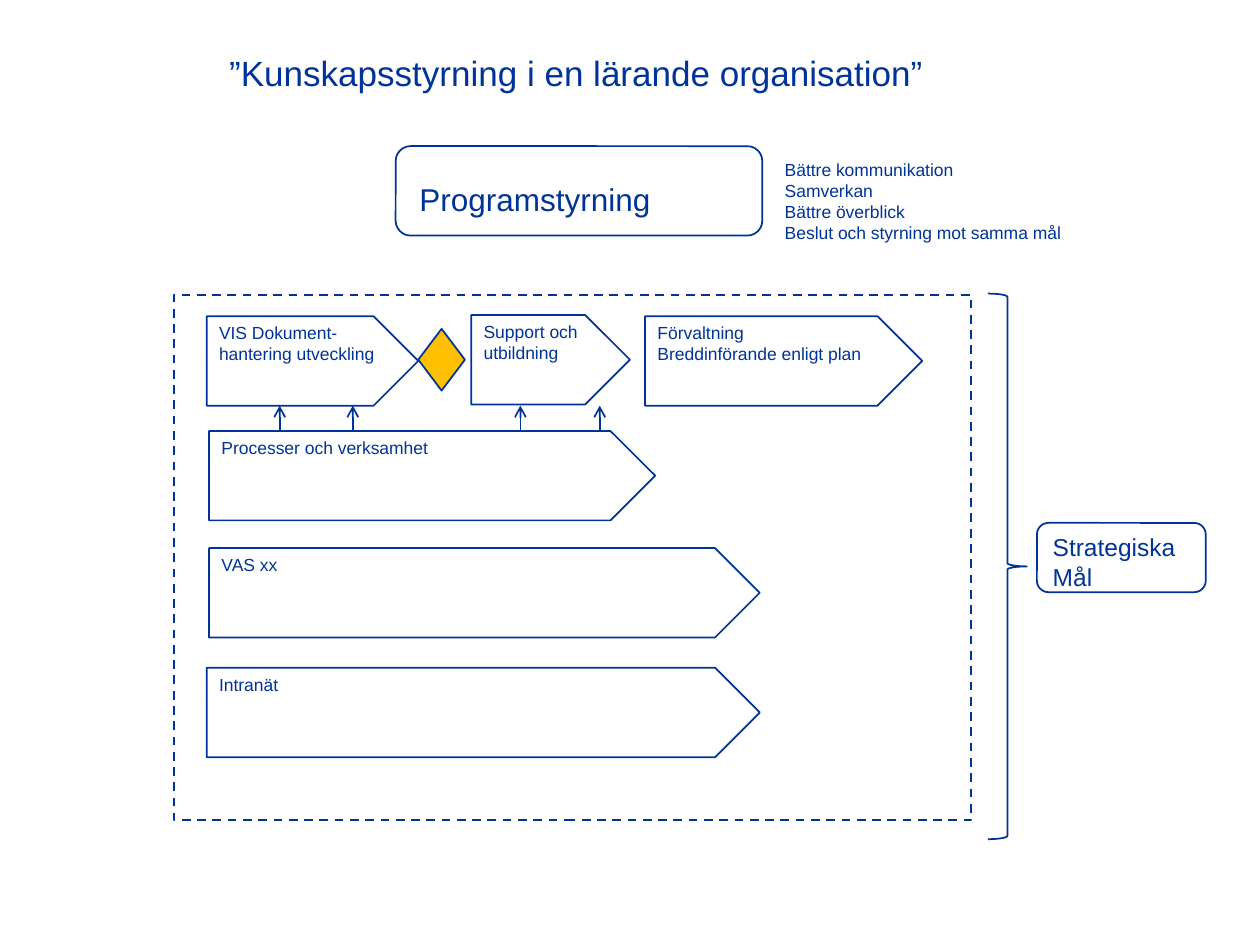
from lxml import etree
from pptx import Presentation
from pptx.dml.color import RGBColor
from pptx.enum.dml import MSO_LINE
from pptx.enum.shapes import MSO_CONNECTOR, MSO_SHAPE
from pptx.enum.text import MSO_ANCHOR, PP_ALIGN
from pptx.oxml.ns import qn
from pptx.util import Inches, Pt

BLUE, WHITE, GOLD = "003399", "FFFFFF", "FFC000"
ARROW_H = 0.71


def color(hex_value):
    return RGBColor.from_string(hex_value)


def write(sp, text, size=10, font="Arial", fill=BLUE, wrap=True):
    """Put one paragraph per line of text into a shape."""
    tf = sp.text_frame
    tf.word_wrap = wrap
    tf.vertical_anchor = MSO_ANCHOR.TOP
    for i, line in enumerate(text.split("\n")):
        p = tf.paragraphs[0] if i == 0 else tf.add_paragraph()
        p.alignment = PP_ALIGN.LEFT
        r = p.add_run()
        r.text = line
        r.font.name = font
        r.font.size = Pt(size)
        r.font.color.rgb = color(fill)


def add_text(s, box, text, **fmt):
    sp = s.shapes.add_textbox(*map(Inches, box))
    write(sp, text, **fmt)


def add_shape(s, kind, box, text="", fill=WHITE, width=1, **fmt):
    sp = s.shapes.add_shape(kind, *map(Inches, box))
    sp.shadow.inherit = False
    sp.fill.solid()
    sp.fill.fore_color.rgb = color(fill)
    sp.line.color.rgb = color(BLUE)
    sp.line.width = Pt(width)
    if text:
        write(sp, text, **fmt)
    return sp


def add_up_arrow(s, x, bottom, top):
    line = s.shapes.add_connector(
        MSO_CONNECTOR.STRAIGHT, Inches(x), Inches(bottom), Inches(x), Inches(top))
    line.line.color.rgb = color(BLUE)
    line.line.width = Pt(1)
    etree.SubElement(line.line._get_or_add_ln(), qn("a:tailEnd"), type="arrow")
    etree.SubElement(line._element.spPr, qn("a:effectLst"))


def add_header(s, x, y):
    # Title, programme box and its benefits
    add_text(s, (x, y, 5.75, 0.44),
             "”Kunskapsstyrning i en lärande organisation”", size=20, wrap=False)
    add_shape(s, MSO_SHAPE.ROUNDED_RECTANGLE, (x + 1.42, y + 0.8, 2.91, ARROW_H))
    add_text(s, (x + 1.51, y + 1.02, 2.05, 0.4), "Programstyrning", size=18, wrap=False)
    add_text(s, (x + 4.41, y + 0.85, 3.56, 0.77),
             "Bättre kommunikation\nSamverkan\nBättre överblick\n"
             "Beslut och styrning mot samma mål")


def add_projects(s, x, y, w, h):
    # Dashed frame
    frame = add_shape(s, MSO_SHAPE.RECTANGLE, (x, y, w, h), width=1.25)
    frame.line.dash_style = MSO_LINE.DASH

    # Links from the processes up to the first row
    for dx in (0.84, 1.42, 2.75, 3.38):
        add_up_arrow(s, x + dx, y + 1.17, y + 0.88)

    # Project arrows: offset in the frame, width, label
    projects = [
        (0.26, 0.17, 1.68, "VIS Dokument-hantering utveckling"),
        (2.36, 0.16, 1.26, "Support och utbildning"),
        (3.74, 0.17, 2.2, "Förvaltning\nBreddinförande enligt plan"),
        (0.28, 1.08, 3.54, "Processer och verksamhet"),
        (0.28, 2.01, 4.37, "VAS xx"),
        (0.26, 2.96, 4.39, "Intranät"),
    ]
    for dx, dy, width, label in projects:
        add_shape(s, MSO_SHAPE.PENTAGON, (x + dx, y + dy, width, ARROW_H), label)

    # Decision point
    add_shape(s, MSO_SHAPE.DIAMOND, (x + 1.94, y + 0.27, 0.37, 0.49), fill=GOLD)


def add_goals(s, x, y, h):
    # Brace over all projects, pointing at the goals
    brace = add_shape(s, MSO_SHAPE.LEFT_BRACE, (x, y, 0.31, h))
    brace.rotation = 180
    add_shape(s, MSO_SHAPE.ROUNDED_RECTANGLE, (x + 0.39, y + 1.82, 1.34, 0.55),
              "Strategiska Mål", size=14)


def main():
    prs = Presentation()
    prs.slide_width, prs.slide_height = Inches(10), Inches(7.5)
    s = prs.slides.add_slide(prs.slide_layouts[6])
    add_header(s, 1.72, 0.36)
    add_projects(s, 1.38, 2.34, 6.33, 4.17)
    add_goals(s, 7.84, 2.33, 4.33)
    prs.save("out.pptx")


if __name__ == "__main__":
    main()
